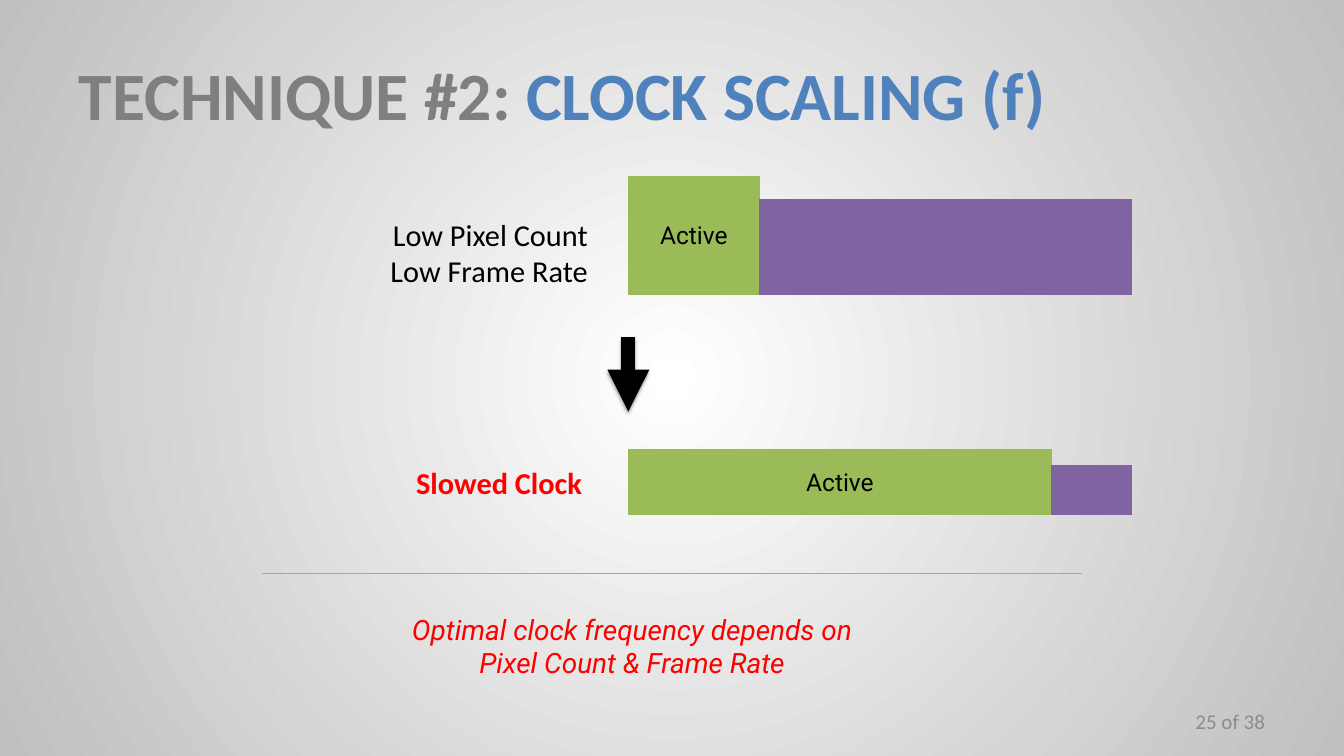
from lxml import etree
from pptx import Presentation
from pptx.dml.color import RGBColor
from pptx.enum.shapes import MSO_CONNECTOR as CONN, MSO_SHAPE as SHAPE
from pptx.enum.text import MSO_ANCHOR as ANCHOR, MSO_AUTO_SIZE as AUTO, PP_ALIGN as ALIGN
from pptx.oxml import parse_xml
from pptx.oxml.ns import nsdecls, qn
from pptx.util import Inches, Pt

# Content
TITLE = [("TECHNIQUE #2: ", "7F7F7F"), ("CLOCK SCALING (f)", "4F81BD")]
WORKLOAD = ["Low Pixel Count", "Low Frame Rate"]
SLOWED = ["Slowed Clock"]
CONCLUSION = ["Optimal clock frequency depends on\nPixel Count & Frame Rate"]
PAGE = ["25 of 38"]
# Power bars: bottom, active width, active height, idle height
BARS = [(3.5, 1.56, 1.4, 1.13), (6.12, 5.04, 0.77, 0.58)]
BAR_LEFT, BAR_RIGHT = 7.48, 13.47
GREEN, GREEN_EDGE, PURPLE = "9BBB59", "98B955", "8064A2"
BLACK, RED = "000000", "FF0000"


def rgb(color):
    return RGBColor.from_string(color)


def add_run(p, text, size, font="Calibri", color=BLACK, bold=False, italic=False):
    for i, line in enumerate(text.split("\n")):
        if i:
            p.add_line_break()
        r = p.add_run()
        r.text = line
        r.font.size, r.font.name = Pt(size), font
        r.font.bold, r.font.italic = bold, italic
        r.font.color.rgb = rgb(color)


def write(sp, lines, align, anchor=ANCHOR.TOP, margins=(0.1, 0.05), **fmt):
    tf = sp.text_frame
    tf.vertical_anchor = anchor
    tf.margin_left = tf.margin_right = Inches(margins[0])
    tf.margin_top = tf.margin_bottom = Inches(margins[1])
    for i, line in enumerate(lines):
        p = tf.add_paragraph() if i else tf.paragraphs[0]
        p.alignment = align
        add_run(p, line, **fmt)
    return tf


def add_label(box, lines, align, **fmt):
    sp = s.shapes.add_textbox(*map(Inches, box))
    tf = write(sp, lines, align, **fmt)
    tf.word_wrap, tf.auto_size = False, AUTO.SHAPE_TO_FIT_TEXT


def add_bar(left, top, width, height, fill, edge):
    sp = s.shapes.add_shape(SHAPE.RECTANGLE, *map(Inches, (left, top, width, height)))
    sp.shadow.inherit = False
    sp.fill.solid()
    sp.fill.fore_color.rgb = rgb(fill)
    sp.line.color.rgb = rgb(edge)
    sp.line.width = Pt(0.75)
    return sp


def add_line(x1, y1, x2, y2, color, width):
    line = s.shapes.add_connector(CONN.STRAIGHT, *map(Inches, (x1, y1, x2, y2)))
    line.line.color.rgb = rgb(color)
    line.line.width = Pt(width)
    effects = etree.SubElement(line._element.spPr, qn("a:effectLst"))
    return line, effects


prs = Presentation()
prs.slide_width, prs.slide_height = Inches(16), Inches(9)
s = prs.slides.add_slide(prs.slide_layouts[5])

# Radial background
s.background.fill.gradient()
grad = s.background._cSld.find(".//" + qn("a:gradFill"))
for child in list(grad):
    grad.remove(child)
grad.append(parse_xml(
    f'<a:gsLst {nsdecls("a")}><a:gs pos="0"><a:srgbClr val="FFFFFF"/></a:gs>'
    '<a:gs pos="100000"><a:srgbClr val="BFBFBF"/></a:gs></a:gsLst>'))
grad.append(parse_xml(
    f'<a:path {nsdecls("a")} path="circle">'
    '<a:fillToRect l="50000" t="50000" r="50000" b="50000"/></a:path>'))

# Title
title = s.shapes.title
title.left, title.top, title.width, title.height = map(Inches, (0.8, 0.36, 14.4, 1.5))
tf = write(title, [], ALIGN.LEFT, ANCHOR.MIDDLE, (0.14, 0.07))
tf.auto_size = AUTO.NONE
tf.paragraphs[0].alignment = ALIGN.LEFT
for text, color in TITLE:
    add_run(tf.paragraphs[0], text, 58, color=color, bold=True)

# Active and idle bars, aligned at the bottom
for bottom, active_w, active_h, idle_h in BARS:
    active = add_bar(BAR_LEFT, bottom - active_h, active_w, active_h, GREEN, GREEN_EDGE)
    write(active, ["Active"], ALIGN.CENTER, ANCHOR.MIDDLE, size=21, font="Roboto")
    split = BAR_LEFT + active_w
    add_bar(split, bottom - idle_h, BAR_RIGHT - split, idle_h, PURPLE, PURPLE)

# Bar labels
add_label((4.51, 2.52, 2.59, 0.98), WORKLOAD, ALIGN.RIGHT, size=26)
add_label((4.82, 5.48, 2.21, 0.54), SLOWED, ALIGN.RIGHT, size=26, color=RED, bold=True)

# Arrow with a soft shadow
arrow, effects = add_line(BAR_LEFT, 4.01, BAR_LEFT, 4.9, BLACK, 12)
etree.SubElement(arrow.line._get_or_add_ln(), qn("a:tailEnd"), type="triangle")
effects.append(parse_xml(
    f'<a:outerShdw {nsdecls("a")} blurRad="{Pt(3.1)}" dist="{Pt(1.6)}" dir="5400000" '
    'rotWithShape="0"><a:srgbClr val="000000"><a:alpha val="38000"/></a:srgbClr>'
    '</a:outerShdw>'))

# Divider, conclusion and page number
add_line(3.12, 6.82, 12.88, 6.82, "A6A6A6", 0.25)
add_label((4.7, 7.24, 5.65, 0.91), CONCLUSION, ALIGN.CENTER,
          size=24, font="Roboto", color=RED, italic=True)
page = s.shapes.add_textbox(*map(Inches, (11.47, 8.34, 3.73, 0.48)))
write(page, PAGE, ALIGN.RIGHT, ANCHOR.MIDDLE, (0.14, 0.07),
      size=18, color="8C8C8C").word_wrap = True

prs.save("out.pptx")
